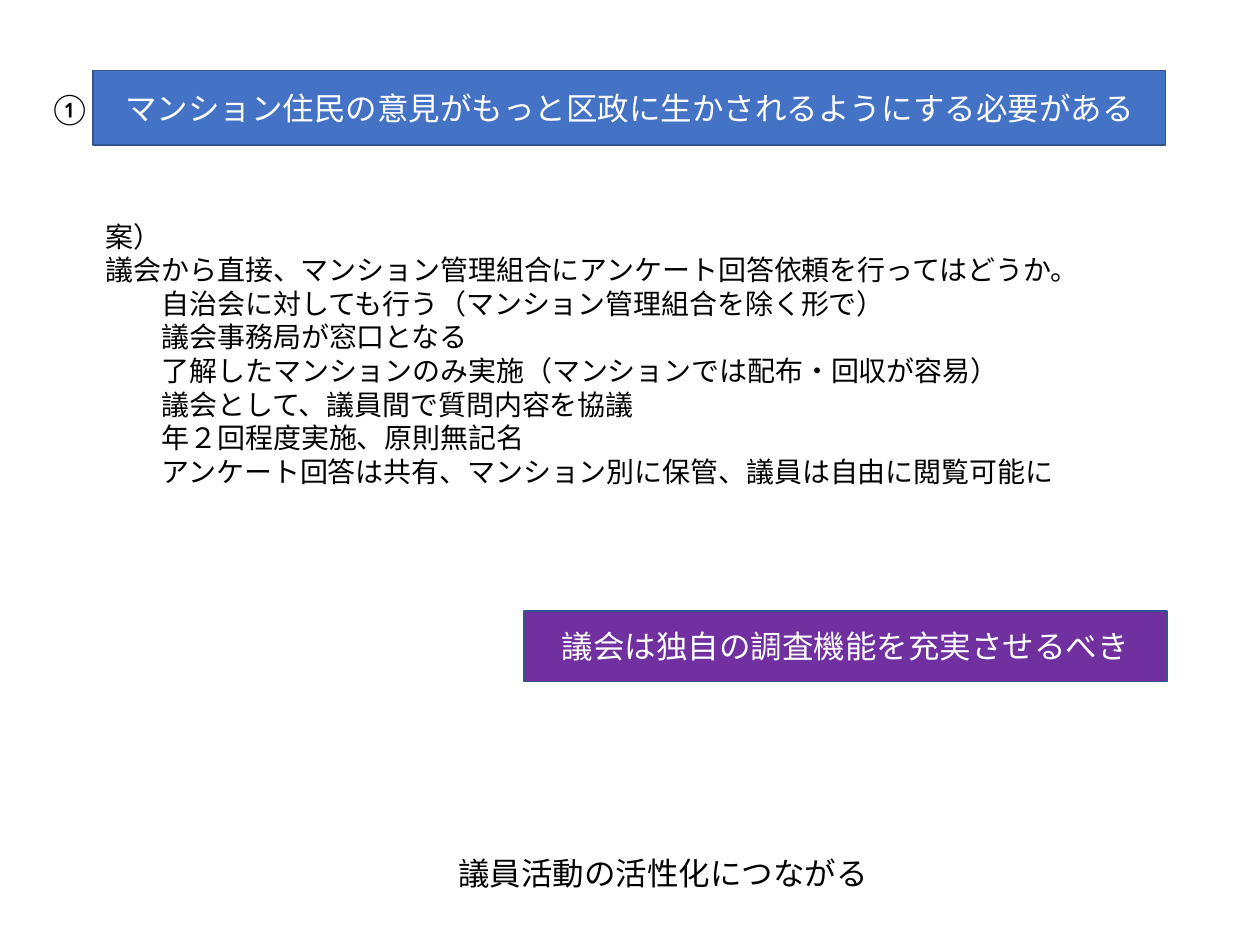
from pptx import Presentation
from pptx.dml.color import RGBColor
from pptx.enum.shapes import MSO_SHAPE
from pptx.enum.text import MSO_ANCHOR, MSO_AUTO_SIZE, PP_ALIGN
from pptx.util import Inches, Pt

COLORS = {"blue": "4472C4", "purple": "7030A0", "edge": "325491",
          "white": "FFFFFF", "black": "000000"}
COLUMNS, ROWS = 100, 75
LEFT, WIDTH = 7.4, 85.1
PROPOSAL = ["案）", "議会から直接、マンション管理組合にアンケート回答依頼を行ってはどうか。"]
DETAILS = [
    "自治会に対しても行う（マンション管理組合を除く形で）",
    "議会事務局が窓口となる",
    "了解したマンションのみ実施（マンションでは配布・回収が容易）",
    "議会として、議員間で質問内容を協議",
    "年２回程度実施、原則無記名",
    "アンケート回答は共有、マンション別に保管、議員は自由に閲覧可能に",
]


def color(name):
    return RGBColor.from_string(COLORS[name])


def write(para, text, size=18, ink="black", align=PP_ALIGN.LEFT, indent=0):
    """Fill a paragraph; the indent counts full-width characters."""
    para.alignment = align
    if indent:
        properties = para._p.get_or_add_pPr()
        properties.set("marL", str(Pt(indent * size)))
        properties.set("indent", "0")
    span = para.add_run()
    span.text = text
    span.font.name = "Calibri"
    span.font.size = Pt(size)
    span.font.color.rgb = color(ink)


class Painter:
    """Places styled elements on the current slide by grid columns and rows."""

    def __init__(self, deck):
        self.deck = deck
        self.page = deck.slides.add_slide(deck.slide_layouts[6])

    def place(self, left, top, width, height):
        across = self.deck.slide_width / COLUMNS
        down = self.deck.slide_height / ROWS
        return [round(length) for length in
                (left * across, top * down, width * across, height * down)]

    def banner(self, text, fill, *area):
        box = self.page.shapes.add_shape(MSO_SHAPE.RECTANGLE, *self.place(*area))
        box.shadow.inherit = False
        box.fill.solid()
        box.fill.fore_color.rgb = color(fill)
        box.line.color.rgb = color("edge")
        box.line.width = Pt(1)
        box.text_frame.vertical_anchor = MSO_ANCHOR.MIDDLE
        write(box.text_frame.paragraphs[0], text, ink="white", align=PP_ALIGN.CENTER)

    def text(self, lines, *area, size=18):
        box = self.page.shapes.add_textbox(*self.place(*area))
        frame = box.text_frame
        frame.word_wrap = True
        frame.auto_size = MSO_AUTO_SIZE.SHAPE_TO_FIT_TEXT
        for number, (line, indent) in enumerate(lines):
            para = frame.add_paragraph() if number else frame.paragraphs[0]
            write(para, line, size=size, indent=indent)


def main():
    deck = Presentation()
    deck.slide_width, deck.slide_height = Inches(10), Inches(7.5)
    painter = Painter(deck)
    painter.banner("マンション住民の意見がもっと区政に生かされるようにする必要がある",
                   "blue", LEFT, 5.6, WIDTH, 5.9)
    lines = [(line, 0) for line in PROPOSAL] + [(line, 2) for line in DETAILS]
    painter.text(lines, LEFT, 16.9, WIDTH, 22.6, size=16)
    painter.text([("①", 0)], 2.9, 6.6, 4.6, 4)
    painter.text([("議員活動の活性化につながる", 0)], 35.4, 67.3, 57.1, 4)
    painter.banner("議会は独自の調査機能を充実させるべき", "purple", 41.6, 48.5, 51, 5.6)
    deck.save("out.pptx")


if __name__ == "__main__":
    main()
